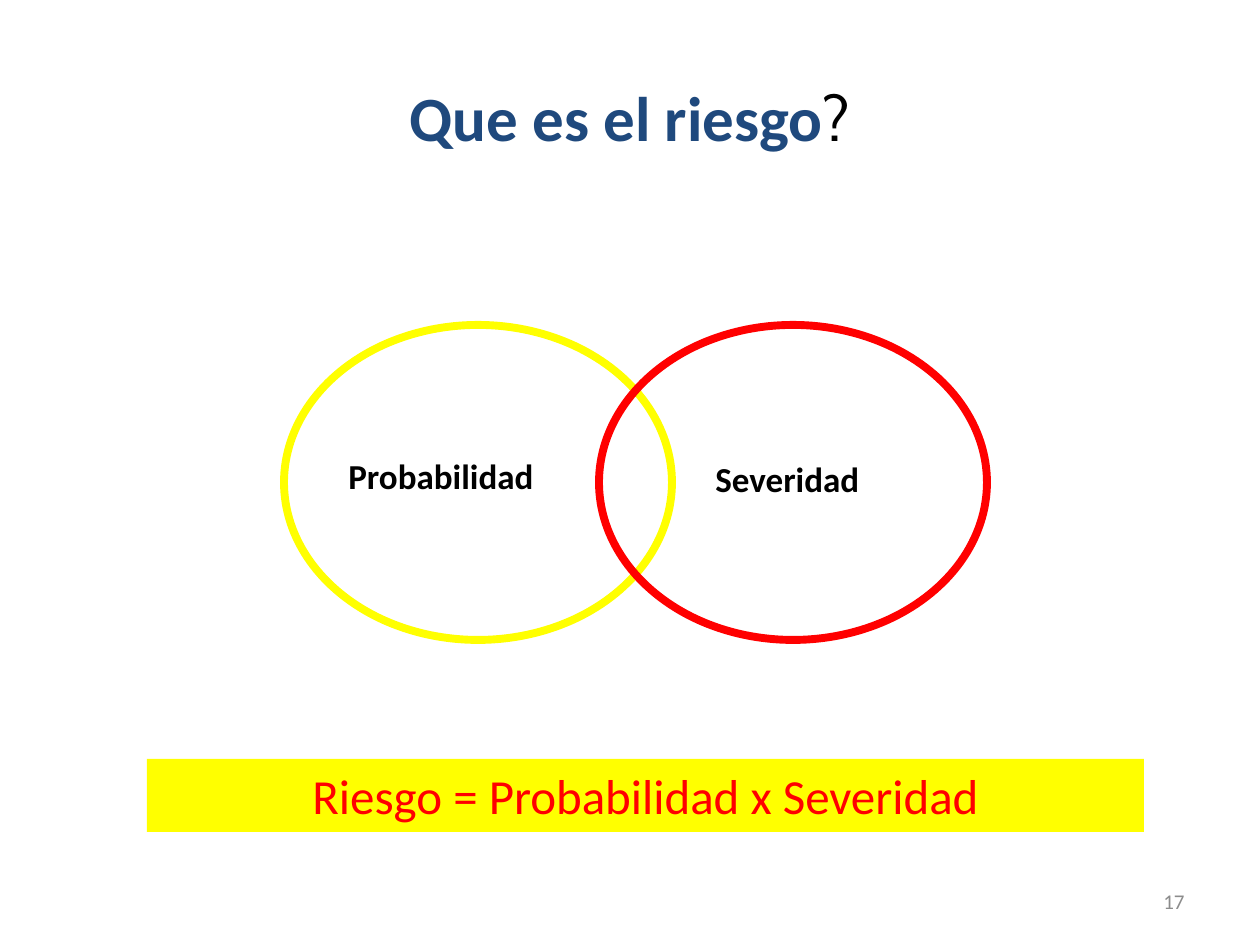
from pptx import Presentation
from pptx.dml.color import RGBColor
from pptx.enum.shapes import MSO_SHAPE as SHAPE
from pptx.enum.text import MSO_ANCHOR as ANCHOR, PP_ALIGN as ALIGN
from pptx.util import Emu, Pt

SCALE = 914400 // 126
YELLOW, RED, BLACK = "FFFF00", "FF0000", "000000"
BOLD = {"size": Pt(20), "bold": True}


def px(*sizes):
    return [Emu(size * SCALE) for size in sizes]


def color(code):
    return RGBColor.from_string(code)


def write(shape, runs, align=ALIGN.LEFT, anchor=ANCHOR.TOP):
    """Fill a shape with one paragraph of (text, hex color, font format) runs."""
    frame = shape.text_frame
    frame.word_wrap = True
    frame.vertical_anchor = anchor
    line = frame.paragraphs[0]
    line.alignment = align
    for text, code, style in runs:
        run = line.add_run()
        run.text = text
        run.font.color.rgb = color(code)
        for name, value in {"name": "Calibri", **style}.items():
            setattr(run.font, name, value)


def add_text(slide, box, runs, **layout):
    write(slide.shapes.add_textbox(*px(*box)), runs, **layout)


def add_ring(slide, box, code):
    ring = slide.shapes.add_shape(SHAPE.OVAL, *px(*box))
    ring.shadow.inherit = False
    ring.fill.background()
    ring.line.color.rgb = color(code)
    ring.line.width = Pt(4.5)


def add_band(slide, box, code, runs):
    band = slide.shapes.add_shape(SHAPE.RECTANGLE, *px(*box))
    band.shadow.inherit = False
    band.fill.solid()
    band.fill.fore_color.rgb = color(code)
    band.line.fill.background()
    write(band, runs, align=ALIGN.CENTER)


def main():
    deck = Presentation()
    deck.slide_width, deck.slide_height = px(1260, 945)
    slide = deck.slides.add_slide(deck.slide_layouts[6])

    title = [
        ("Que es el riesgo", "1F497D", {"size": Pt(36), "bold": True}),
        ("?", BLACK, {"size": Pt(36), "name": "Cabin"}),
    ]
    add_text(slide, (63, 38, 1134, 157), title,
             align=ALIGN.CENTER, anchor=ANCHOR.MIDDLE)

    for left, code in ((284, YELLOW), (599, RED)):
        add_ring(slide, (left, 325, 388, 315), code)
    add_text(slide, (336, 448, 239, 56), [("Probabilidad", BLACK, BOLD)])
    add_text(slide, (703, 451, 194, 59), [("Severidad", BLACK, BOLD)])

    add_band(slide, (147, 759, 997, 73), YELLOW,
             [("Riesgo = Probabilidad x Severidad", RED, {"size": Pt(28)})])
    add_text(slide, (903, 876, 294, 50), [("17", "8C8C8C", {"size": Pt(12)})],
             align=ALIGN.RIGHT, anchor=ANCHOR.MIDDLE)
    deck.save("out.pptx")


if __name__ == "__main__":
    main()
